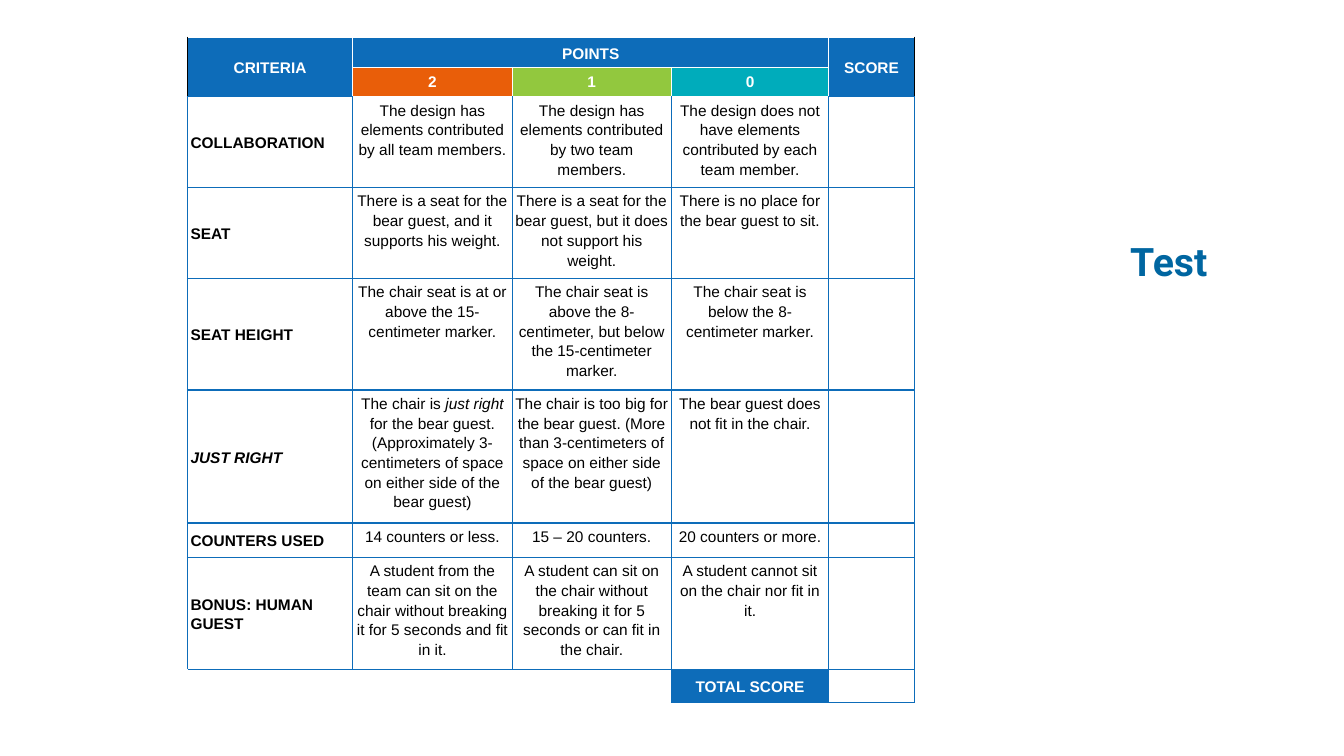
from lxml.etree import SubElement
from pptx import Presentation
from pptx.dml.color import RGBColor
from pptx.enum.text import MSO_ANCHOR as Anchor, PP_ALIGN as Align
from pptx.oxml.ns import qn
from pptx.util import Inches, Pt

BLUE, WHITE, BLACK = "0D6CB9", "FFFFFF", "000000"
COLUMN_WIDTHS = [1.64, 1.58, 1.58, 1.56, 0.85]
ROW_HEIGHTS = [0.3, 0.29, 0.9, 0.9, 1.11, 1.32, 0.34, 1.11, 0.33]
RUBRIC = [
    ["CRITERIA", "POINTS", "", "", "SCORE"],
    ["", "2", "1", "0", ""],
    ["COLLABORATION",
     "The design has elements contributed by all team members.",
     "The design has elements contributed by two team members.",
     "The design does not have elements contributed by each team member.", ""],
    ["SEAT",
     "There is a seat for the bear guest, and it supports his weight.",
     "There is a seat for the bear guest, but it does not support his weight.",
     "There is no place for the bear guest to sit.", ""],
    ["SEAT HEIGHT",
     "The chair seat is at or above the 15-centimeter marker.",
     "The chair seat is above the 8-centimeter, but below the 15-centimeter marker.",
     "The chair seat is below the 8-centimeter marker.", ""],
    ["*JUST RIGHT*",
     "The chair is *just right* for the bear guest. "
     "(Approximately 3-centimeters of space on either side of the bear guest)",
     "The chair is too big for the bear guest. "
     "(More than 3-centimeters of space on either side of the bear guest)",
     "The bear guest does not fit in the chair.", ""],
    ["COUNTERS USED", "14 counters or less.", "15 – 20 counters.",
     "20 counters or more.", ""],
    ["BONUS: HUMAN GUEST",
     "A student from the team can sit on the chair without breaking it "
     "for 5 seconds and fit in it.",
     "A student can sit on the chair without breaking it for 5 seconds "
     "or can fit in the chair.",
     "A student cannot sit on the chair nor fit in it.", ""],
    ["", "", "", "TOTAL SCORE", ""],
]
MERGES = [(0, 0, 1, 0), (0, 1, 0, 3), (0, 4, 1, 4), (8, 0, 8, 2)]
POINT_FILLS = {(1, 1): "E95E09", (1, 2): "92C83E", (1, 3): "00ACBB"}
TOTAL_ROW, TOTAL_COLUMN = 8, 3


def rgb(value):
    """Turn a hex string into a colour."""
    return RGBColor.from_string(value)


def is_heading(row, column):
    """Tell whether a cell is a coloured heading."""
    return row < 2 or (row, column) == (TOTAL_ROW, TOTAL_COLUMN)


def border_colors(row, column):
    """Give the left, right, top and bottom border colours of a cell."""
    if row < 2 and column == 0:
        return BLACK, WHITE, WHITE, BLUE
    if row < 2 and column == 4:
        return WHITE, BLACK, WHITE, BLUE
    if row < 2:
        return WHITE, WHITE, WHITE, WHITE
    if row == 2 and 1 <= column <= 3:
        return BLUE, BLUE, WHITE, BLUE
    if row == TOTAL_ROW and column < TOTAL_COLUMN:
        return WHITE, BLUE, BLUE, WHITE
    return BLUE, BLUE, BLUE, BLUE


def draw_borders(cell, colors):
    """Draw the four one-point borders of a cell."""
    properties = cell._tc.get_or_add_tcPr()
    for side, color in zip("LRTB", colors):
        line = SubElement(properties, qn(f"a:ln{side}"), w=str(Pt(1)))
        SubElement(SubElement(line, qn("a:solidFill")), qn("a:srgbClr"), val=color)


def style_font(font, name, size, color, bold, italic=False):
    """Set the look of a font."""
    font.name, font.size = name, Pt(size)
    font.bold, font.italic = bold, italic
    font.color.rgb = rgb(color)


def write_cell(cell, text, row, column):
    """Write a rubric text, with starred parts in italics."""
    heading = is_heading(row, column)
    label = column == 0
    paragraph = cell.text_frame.paragraphs[0]
    paragraph.alignment = Align.LEFT if label and not heading else Align.CENTER
    paragraph.line_spacing = 1.15
    paragraph.font.size = Pt(11)
    middle = label or (heading and row != 1)
    cell.vertical_anchor = Anchor.MIDDLE if middle else Anchor.TOP
    for index, part in enumerate(text.split("*")):
        if part:
            run = paragraph.add_run()
            run.text = part
            style_font(run.font, "Arial", 11, WHITE if heading else BLACK,
                       heading or label, index % 2 == 1)


def add_rubric(slide):
    """Add the scoring rubric."""
    table = slide.shapes.add_table(
        len(ROW_HEIGHTS), len(COLUMN_WIDTHS), Inches(1.86), Inches(0.37),
        Inches(sum(COLUMN_WIDTHS)), Inches(sum(ROW_HEIGHTS))).table
    table.first_row = table.horz_banding = False
    for column, width in zip(table.columns, COLUMN_WIDTHS):
        column.width = Inches(width)
    for row, height in zip(table.rows, ROW_HEIGHTS):
        row.height = Inches(height)
    for top, left, bottom, right in MERGES:
        table.cell(top, left).merge(table.cell(bottom, right))
    for row, texts in enumerate(RUBRIC):
        for column, text in enumerate(texts):
            cell = table.cell(row, column)
            cell.margin_left = cell.margin_right = Inches(0.03)
            cell.margin_top = cell.margin_bottom = Inches(0.03)
            draw_borders(cell, border_colors(row, column))
            cell.fill.solid()
            plain_fill = BLUE if is_heading(row, column) else WHITE
            cell.fill.fore_color.rgb = rgb(POINT_FILLS.get((row, column), plain_fill))
            write_cell(cell, text, row, column)


def add_title(slide, text):
    """Place and format the slide title."""
    title = slide.shapes.title
    title.left, title.top = Inches(11.11), Inches(2.3)
    title.width, title.height = Inches(1.44), Inches(0.57)
    title.text_frame.vertical_anchor = Anchor.TOP
    paragraph = title.text_frame.paragraphs[0]
    paragraph.alignment = Align.LEFT
    run = paragraph.add_run()
    run.text = text
    style_font(run.font, "Roboto", 28, "0066A1", True)


def main():
    """Build the rubric slide."""
    deck = Presentation()
    deck.slide_width, deck.slide_height = Inches(13.33), Inches(7.5)
    slide = deck.slides.add_slide(deck.slide_layouts[5])
    add_title(slide, "Test")
    add_rubric(slide)
    deck.save("out.pptx")


if __name__ == "__main__":
    main()
